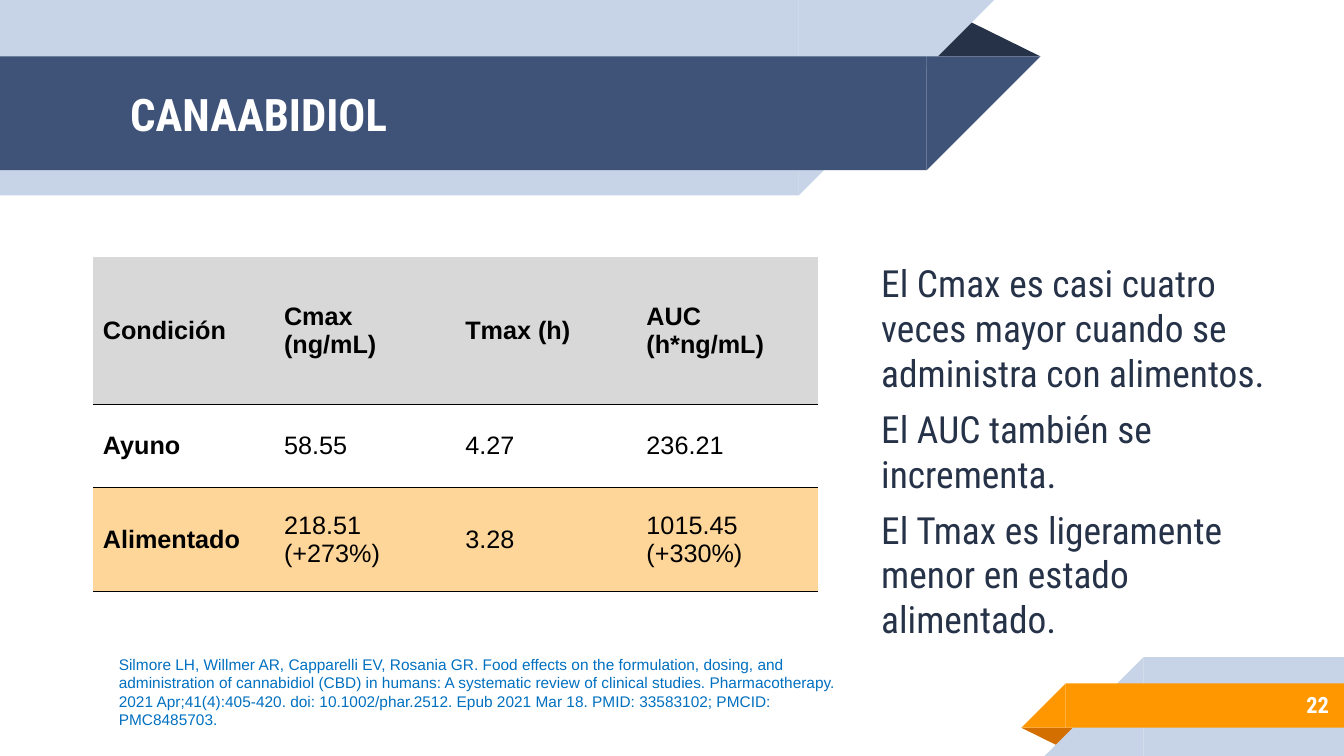
"""Build the cannabidiol food-effect slide."""
from lxml import etree
from pptx import Presentation
from pptx import util as u
from pptx.dml import color
from pptx.enum import shapes, text
from pptx.oxml import ns

NAVY, DARK, PALE = "3F5378", "263248", "C7D3E6"
ORANGE, RUST, PEACH = "FF9800", "D26F00", "FFD699"
WHITE, BLACK, GREY, BLUE = "FFFFFF", "000000", "D8D8D8", "0070C0"
HEADING, PLAIN = "Roboto Condensed", "Arial"
LEFT, RIGHT = text.PP_ALIGN.LEFT, text.PP_ALIGN.RIGHT
TOP, MIDDLE = text.MSO_ANCHOR.TOP, text.MSO_ANCHOR.MIDDLE
PLAIN_TABLE_STYLE = "{2D5ABB26-0587-4C30-8999-92F81FD0307C}"

ROWS = [
    ["Condición", "Cmax (ng/mL)", "Tmax (h)", "AUC (h*ng/mL)"],
    ["Ayuno", "58.55", "4.27", "236.21"],
    ["Alimentado", "218.51 (+273%)", "3.28", "1015.45 (+330%)"],
]
ROW_HEIGHTS = [1.46, 0.83, 1.03]
ROW_FILLS = [GREY, None, PEACH]
FINDINGS = [
    "El Cmax es casi cuatro veces mayor cuando se administra con alimentos.",
    "El AUC también se incrementa.",
    "El Tmax es ligeramente menor en estado alimentado.",
]
CITATION = (
    "Silmore LH, Willmer AR, Capparelli EV, Rosania GR. Food effects on the "
    "formulation, dosing, and administration of cannabidiol (CBD) in humans: "
    "A systematic review of clinical studies. Pharmacotherapy. 2021 "
    "Apr;41(4):405-420. doi: 10.1002/phar.2512. Epub 2021 Mar 18. "
    "PMID: 33583102; PMCID: PMC8485703."
)


def rgb(value):
    """Return the colour for a hex string."""
    return color.RGBColor.from_string(value)


def apply_format(target, values):
    """Set each attribute in the dict on the target."""
    for name, value in values.items():
        setattr(target, name, value)


def place(shape, box):
    """Move a shape to a box given in inches."""
    names = ("left", "top", "width", "height")
    apply_format(shape, dict(zip(names, map(u.Inches, box))))


def write(shape, lines, font, size, hex_color, bold=False, align=LEFT,
          anchor=MIDDLE, inset=0.1, before=0):
    """Fill a shape with formatted paragraphs."""
    frame = shape.text_frame
    apply_format(frame, {"text": "\n".join(lines), "word_wrap": True,
                         "auto_size": text.MSO_AUTO_SIZE.NONE,
                         "vertical_anchor": anchor,
                         "margin_left": u.Inches(0.1),
                         "margin_right": u.Inches(0.1),
                         "margin_top": u.Inches(inset),
                         "margin_bottom": u.Inches(inset)})
    for paragraph in frame.paragraphs:
        apply_format(paragraph, {"alignment": align,
                                 "space_before": u.Pt(before)})
        for run in paragraph.runs:
            apply_format(run.font, {"name": font, "size": u.Pt(size),
                                    "bold": bold})
            run.font.color.rgb = rgb(hex_color)


def add_piece(slide, kind, box, hex_color, rotation=0, flip=False):
    """Add one flat ribbon piece."""
    shape = slide.shapes.add_shape(kind, *map(u.Inches, box))
    shape.shadow.inherit = False
    shape.fill.solid()
    shape.fill.fore_color.rgb = rgb(hex_color)
    shape.line.fill.background()
    shape.rotation = rotation
    if flip:
        shape.element.spPr.get_or_add_xfrm().set("flipH", "1")
    return shape


def add_fold(slide, box, hex_color, rotation=0):
    """Add the dark fold behind a ribbon."""
    fold = add_piece(slide, shapes.MSO_SHAPE.ISOSCELES_TRIANGLE, box,
                     hex_color, rotation)
    fold.adjustments[0] = 0.324


def add_band(slide, box, hex_color, slant_right):
    """Add a band whose slanted end is as wide as the band is high."""
    left, top, width, height = box
    body = width - height
    if slant_right:
        body_left, slant_left, rotation = left, left + body, 180
    else:
        body_left, slant_left, rotation = left + height, left, 0
    add_piece(slide, shapes.MSO_SHAPE.RECTANGLE,
              (body_left, top, body, height), hex_color)
    add_piece(slide, shapes.MSO_SHAPE.RIGHT_TRIANGLE,
              (slant_left, top, height, height), hex_color, rotation, True)


def add_header(slide, box):
    """Draw the top ribbon and put the title on it."""
    left, top, width, height = box
    add_fold(slide, (left + width - 1.14, top + 0.18, 1.14, 0.38), DARK)
    add_band(slide, (left, top, width - 0.46, height), PALE, True)
    add_band(slide, (left, top + 0.56, width, 1.13), NAVY, True)
    title = slide.shapes.title
    title.element.getparent().append(title.element)
    place(title, (left + 1.19, top + 0.57, 7.67, 1.12))
    write(title, ["CANAABIDIOL"], HEADING, 32, WHITE, bold=True)


def add_footer(slide, box):
    """Draw the corner ribbon with the page number."""
    left, top, width, height = box
    add_fold(slide, (left, top + 0.7, 0.57, 0.19), RUST, 180)
    add_band(slide, (left + 0.23, top, width - 0.23, height), PALE, False)
    add_band(slide, (left, top + 0.26, width, 0.44), ORANGE, False)
    number = slide.shapes.add_textbox(
        *map(u.Inches, (left + 0.98, top + 0.24, 2.17, 0.46)))
    write(number, ["22"], HEADING, 16, WHITE, bold=True, align=RIGHT)


def add_bottom_border(cell):
    """Draw a thin black line under a cell."""
    line = etree.Element(ns.qn("a:lnB"), w=str(u.Pt(1)))
    fill = etree.SubElement(line, ns.qn("a:solidFill"))
    etree.SubElement(fill, ns.qn("a:srgbClr"), val=BLACK)
    cell.fill.background()
    cell._tc.get_or_add_tcPr().insert(0, line)


def add_results(slide, box):
    """Add the table of fasted and fed values."""
    frame = slide.shapes.add_table(len(ROWS), len(ROWS[0]),
                                   *map(u.Inches, box))
    table = frame.table
    table.horz_banding = False
    style = next(frame.element.iter(ns.qn("a:tableStyleId")))
    style.text = PLAIN_TABLE_STYLE
    for column in table.columns:
        column.width = u.Inches(box[2] / len(ROWS[0]))
    for i, values in enumerate(ROWS):
        table.rows[i].height = u.Inches(ROW_HEIGHTS[i])
        for j, value in enumerate(values):
            cell = table.cell(i, j)
            cell.text = value
            apply_format(cell, {"vertical_anchor": MIDDLE,
                                "margin_left": u.Inches(0.1),
                                "margin_right": u.Inches(0.1)})
            font = cell.text_frame.paragraphs[0].runs[0].font
            apply_format(font, {"name": PLAIN, "size": u.Pt(18),
                                "bold": i == 0 or j == 0})
            font.color.rgb = rgb(BLACK)
            add_bottom_border(cell)
            if ROW_FILLS[i]:
                cell.fill.solid()
                cell.fill.fore_color.rgb = rgb(ROW_FILLS[i])


def add_findings(slide, box):
    """Put the findings in the body placeholder."""
    body = slide.placeholders[1]
    body.element.getparent().append(body.element)
    place(body, box)
    write(body, FINDINGS, HEADING, 26.7, DARK, anchor=TOP, before=8)
    for paragraph in body.text_frame.paragraphs:
        properties = paragraph._p.get_or_add_pPr()
        properties.set("marL", str(u.Inches(0.15)))
        properties.set("indent", "0")
        etree.SubElement(properties, ns.qn("a:buNone"))


def add_citation(slide, box):
    """Add the reference under the table."""
    citation = slide.shapes.add_textbox(*map(u.Inches, box))
    write(citation, [CITATION], PLAIN, 11, BLUE, anchor=TOP, inset=0.05)


def main():
    """Build and save the presentation."""
    presentation = Presentation()
    apply_format(presentation, {"slide_width": u.Inches(13.33),
                                "slide_height": u.Inches(7.5)})
    slide = presentation.slides.add_slide(presentation.slide_layouts[1])
    add_header(slide, (0, 0, 10.32, 1.94))
    add_footer(slide, (10.13, 6.52, 3.2, 0.98))
    add_results(slide, (0.92, 2.55, 7.19, 3.32))
    add_findings(slide, (8.49, 2.48, 4.55, 3.97))
    add_citation(slide, (1.08, 6.45, 7.41, 0.84))
    presentation.save("out.pptx")


if __name__ == "__main__":
    main()
